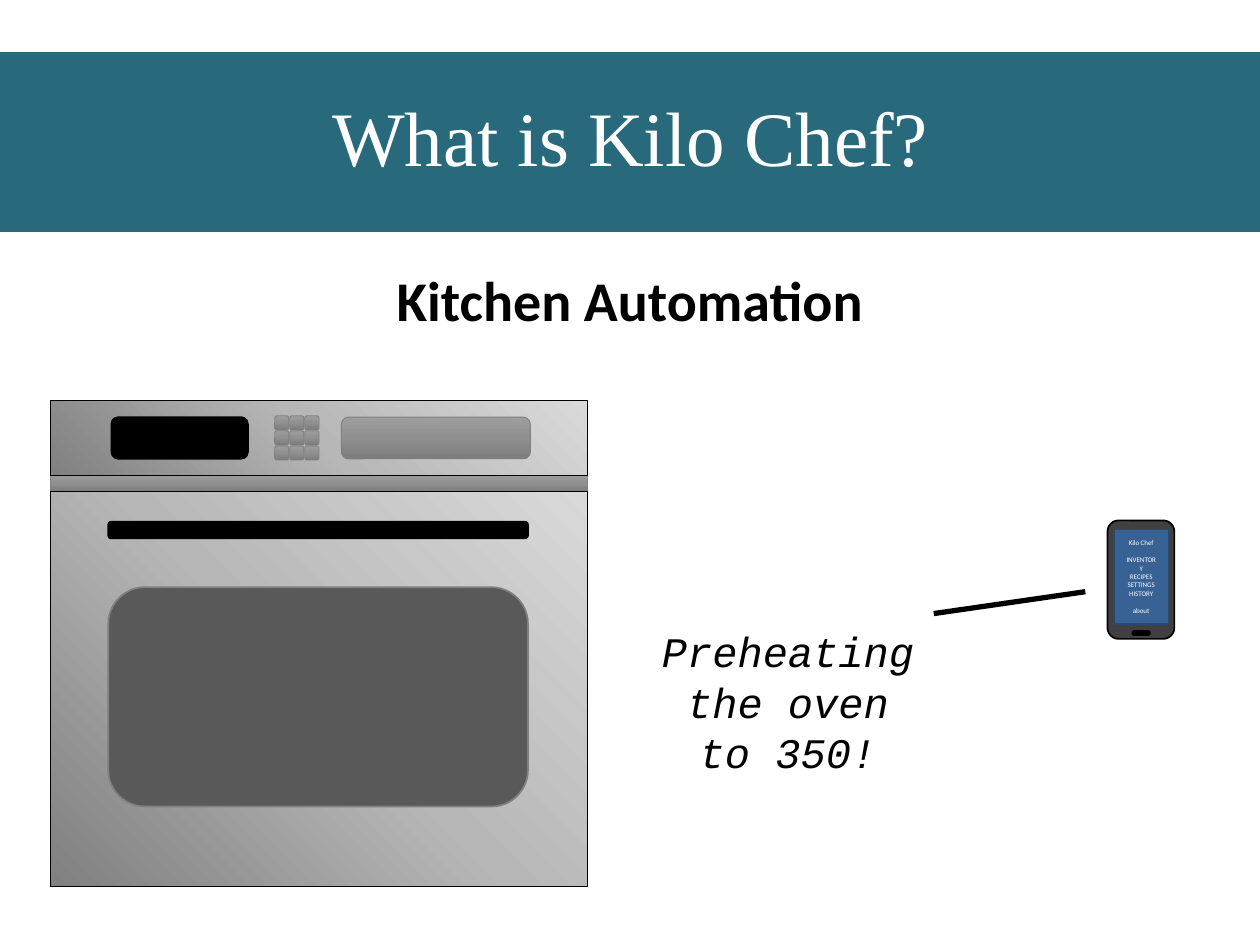
import copy

import pptx
import pptx.dml.color
import pptx.enum.shapes
import pptx.enum.text
import pptx.oxml.ns
import pptx.util

Pt = pptx.util.Pt
SHAPE = pptx.enum.shapes.MSO_SHAPE
CENTER = pptx.enum.text.PP_ALIGN.CENTER
MIDDLE = pptx.enum.text.MSO_ANCHOR.MIDDLE
qn = pptx.oxml.ns.qn

PANEL = (("808080", "B7B7B7", "D9D9D9"), 45)
METAL = (("9D9D9D", "909090", "7C7C7C"), 270)


def color(value):
    return pptx.dml.color.RGBColor.from_string(value)


def set_gradient(shape, colors, angle):
    """Fill with three evenly spaced stops; the angle runs counter-clockwise."""
    shape.fill.gradient()
    shape.fill.gradient_angle = angle
    stop_list = shape._element.spPr.find(qn("a:gradFill")).find(qn("a:gsLst"))
    stop_list.append(copy.deepcopy(stop_list[0]))
    for index, (stop, value) in enumerate(zip(shape.fill.gradient_stops, colors)):
        stop.position = index / 2
        stop.color.rgb = color(value)


def style_shape(shape, fill, line, width):
    """Apply a fill, given as a hex string or a gradient pair, and an outline."""
    if isinstance(fill, str):
        shape.fill.solid()
        shape.fill.fore_color.rgb = color(fill)
    else:
        set_gradient(shape, *fill)
    shape.line.color.rgb = color(line)
    shape.line.width = Pt(width)


def add_part(shapes, kind, box, fill, line="000000", width=1):
    shape = shapes.add_shape(kind, *map(Pt, box))
    shape.shadow.inherit = False
    style_shape(shape, fill, line, width)
    return shape


def move_shape(shape, box):
    shape.left, shape.top, shape.width, shape.height = map(Pt, box)


def write_text(shape, lines, font_name, size, text_color, bold=False, italic=False):
    frame = shape.text_frame
    frame.word_wrap = True
    frame.vertical_anchor = MIDDLE
    frame.text = "\n".join(lines)
    for paragraph in frame.paragraphs:
        paragraph.alignment = CENTER
        font = paragraph.font
        font.name, font.size, font.bold, font.italic = font_name, Pt(size), bold, italic
        font.color.rgb = color(text_color)
    return frame.paragraphs


def fill_title(title, box):
    move_shape(title, box)
    style_shape(title, "286A7C", "FFFFFF", 1.5)
    paragraph, = write_text(title, ["What is Kilo Chef?"], "Times New Roman", 44, "FFFFFF")
    paragraph.line_spacing = 0.9


def fill_subtitle(body, box):
    move_shape(body, box)
    paragraph, = write_text(body, ["Kitchen Automation"], "Calibri", 32, "000000", bold=True)
    paragraph.line_spacing = 0.9
    paragraph.space_before = Pt(10)
    properties = paragraph._p.get_or_add_pPr()
    properties.set("marL", "0")
    properties.set("indent", "0")
    bullet = properties.makeelement(qn("a:buNone"), {})
    properties.find(qn("a:spcBef")).addnext(bullet)


def add_phone(slide, box):
    left, top, width, height = box
    shapes = slide.shapes.add_group_shape().shapes
    add_part(shapes, SHAPE.ROUNDED_RECTANGLE, box, "404040")
    button = add_part(shapes, SHAPE.ROUNDED_RECTANGLE,
                      (left + 14.2, top + 63.1, 10, 2.4), "000000")
    button.adjustments[0] = 0.5
    screen = add_part(shapes, SHAPE.RECTANGLE,
                      (left + 3.6, top + 5.2, width - 6.9, height - 13.8),
                      "386294", "29496D")
    menu = ["Kilo Chef", "INVENTORY", "RECIPES", "SETTINGS", "HISTORY", "about"]
    paragraphs = write_text(screen, menu, "Calibri", 4, "FFFFFF")
    for paragraph in (paragraphs[1], paragraphs[-1]):
        paragraph.space_before = Pt(4.9)


def add_speech(slide, box):
    callout = add_part(slide.shapes, SHAPE.LINE_CALLOUT_1_NO_BORDER, box, "FFFFFF", width=3)
    for index, value in enumerate((0.14, 1.01, 0.05, 1.54)):
        callout.adjustments[index] = value
    write_text(callout, ["Preheating the oven to 350!"], "Courier New", 24, "000000",
               italic=True)


def add_keypad(shapes, left, top, key=8.1, pitch=8.6):
    for row in range(3):
        for column in range(3):
            add_part(shapes, SHAPE.ROUNDED_RECTANGLE,
                     (left + column * pitch, top + row * pitch, key, key),
                     METAL, "808080", 0.5)


def add_oven(slide, box):
    left, top, width, height = box
    panel_height, strip_height = 42.5, 9.4
    door_top = top + panel_height + strip_height
    shapes = slide.shapes.add_group_shape().shapes
    add_part(shapes, SHAPE.RECTANGLE, (left, top + panel_height, width, strip_height),
             METAL, "808080", 0.5)
    add_part(shapes, SHAPE.RECTANGLE, (left, top, width, panel_height), PANEL, width=0.5)
    add_part(shapes, SHAPE.RECTANGLE,
             (left, door_top, width, top + height - door_top), PANEL, width=0.5)

    control_top, control_height = top + 9.4, 23.8
    add_part(shapes, SHAPE.ROUNDED_RECTANGLE,
             (left + 34.9, control_top, 78, control_height), "000000")
    add_keypad(shapes, left + 128.2, top + 8.6)
    add_part(shapes, SHAPE.ROUNDED_RECTANGLE,
             (left + 166.3, control_top, 108, control_height), METAL, "808080", 0.5)

    door_left, door_width = left + 33.1, 239.8
    add_part(shapes, SHAPE.ROUNDED_RECTANGLE,
             (door_left, door_top + 17.3, door_width, 9.4), "000000")
    add_part(shapes, SHAPE.ROUNDED_RECTANGLE,
             (door_left, door_top + 54.7, door_width, 125.3), "595959", "808080")


def main():
    presentation = pptx.Presentation()
    presentation.slide_width, presentation.slide_height = Pt(720), Pt(540)
    slide = presentation.slides.add_slide(presentation.slide_layouts[1])
    fill_title(slide.shapes.title, (-5, 28.8, 730.8, 104.4))
    fill_subtitle(slide.placeholders[1], (49.7, 144.7, 620.6, 57.6))
    add_phone(slide, (632.9, 297.4, 38.2, 67.7))
    add_speech(slide, (368.6, 331.2, 163.4, 139))
    add_oven(slide, (28.8, 229, 306.7, 277.4))
    presentation.save("out.pptx")


if __name__ == "__main__":
    main()
